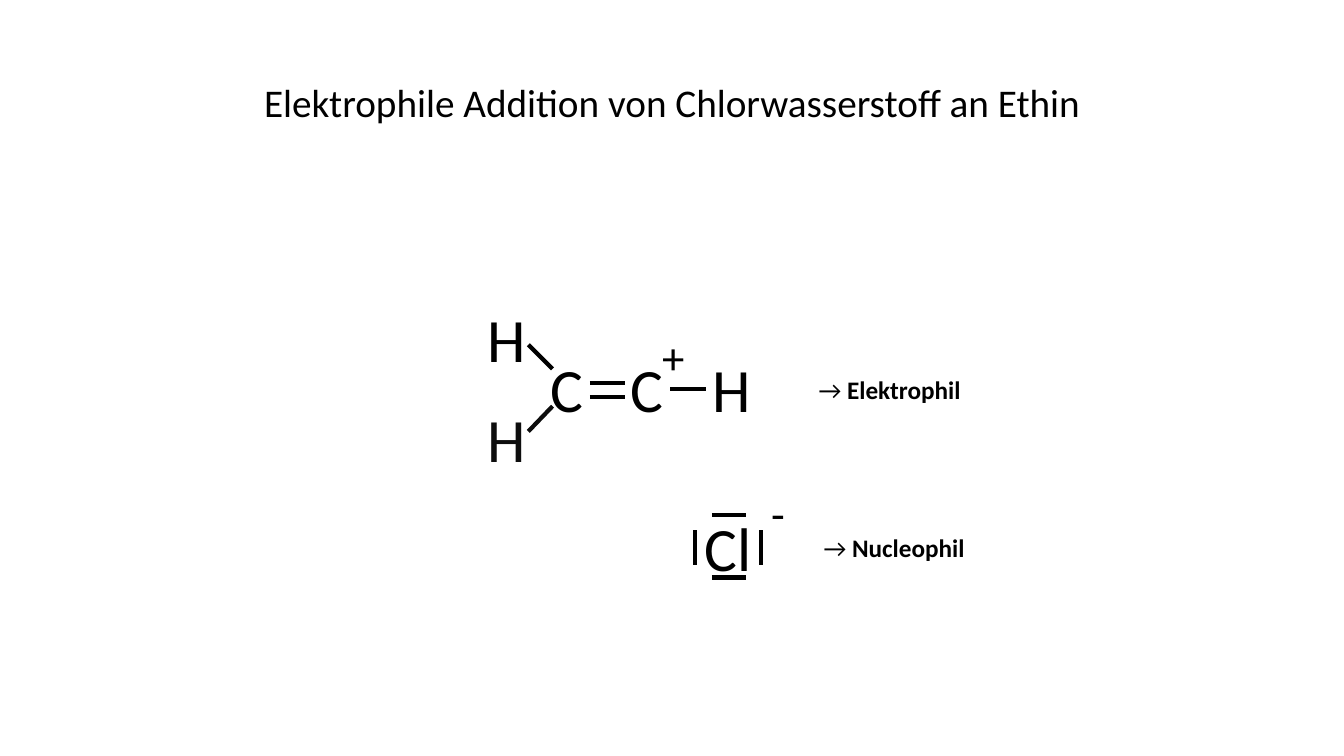
from dataclasses import dataclass

from lxml import etree
from pptx import Presentation
from pptx.dml.color import RGBColor
from pptx.enum.shapes import MSO_CONNECTOR
from pptx.enum.text import MSO_ANCHOR, PP_ALIGN
from pptx.oxml.ns import qn
from pptx.util import Inches, Pt

STRAIGHT = MSO_CONNECTOR.STRAIGHT
TOP = MSO_ANCHOR.TOP
LEFT, CENTER = PP_ALIGN.LEFT, PP_ALIGN.CENTER
TITLE_ONLY_LAYOUT = 5


@dataclass(frozen=True)
class Theme:
    font: str = "Calibri"
    black: RGBColor = RGBColor(0x00, 0x00, 0x00)
    soft_black: RGBColor = RGBColor(0x0D, 0x0D, 0x0D)
    title_size: int = 28
    atom_size: int = 44
    charge_size: int = 32
    label_size: int = 18
    bond_width: int = 3


THEME = Theme()


def write_text(shape, *runs, size, color=THEME.black, align=LEFT):
    """Fill a shape with one paragraph of (text, bold) runs."""
    frame = shape.text_frame
    frame.word_wrap = True
    frame.vertical_anchor = TOP
    paragraph = frame.paragraphs[0]
    paragraph.alignment = align
    for text, bold in runs:
        run = paragraph.add_run()
        run.text = text
        run.font.name = THEME.font
        run.font.size = Pt(size)
        run.font.bold = bold
        run.font.color.rgb = color


def add_box(slide, left, top, width, height):
    return slide.shapes.add_textbox(
        Inches(left), Inches(top), Inches(width), Inches(height))


def add_title(slide, text):
    title = slide.shapes.title
    title.left, title.top = Inches(2.16), Inches(0.73)
    title.width, title.height = Inches(9.01), Inches(0.57)
    write_text(title, (text, False), size=THEME.title_size, align=CENTER)


def add_atom(slide, symbol, left, top, width=0.58, color=THEME.black):
    box = add_box(slide, left, top, width, 0.84)
    write_text(box, (symbol, False), size=THEME.atom_size, color=color)


def add_charge(slide, sign, left, top):
    box = add_box(slide, left, top, 0.94, 0.64)
    write_text(box, (sign, False), size=THEME.charge_size)


def add_label(slide, text, left, top):
    box = add_box(slide, left, top, 4.08, 0.4)
    write_text(box, ("→ ", False), (text, True), size=THEME.label_size)


def add_bond(slide, start_x, start_y, end_x, end_y, color=THEME.black):
    bond = slide.shapes.add_connector(
        STRAIGHT, Inches(start_x), Inches(start_y), Inches(end_x), Inches(end_y))
    bond.line.color.rgb = color
    bond.line.width = Pt(THEME.bond_width)
    # An empty effect list switches the shadow off
    etree.SubElement(bond.element.spPr, qn("a:effectLst"))


def add_vinyl_cation(slide):
    add_charge(slide, "+", 6.47, 3.22)
    for symbol, left, top in (("C", 5.36, 3.43), ("C", 6.15, 3.43),
                              ("H", 4.74, 2.94), ("H", 6.97, 3.43)):
        add_atom(slide, symbol, left, top)
    add_atom(slide, "H", 4.74, 3.93, color=THEME.soft_black)

    # Bonds to hydrogen
    add_bond(slide, 5.24, 3.42, 5.48, 3.66)
    add_bond(slide, 5.48, 4.03, 5.24, 4.28, color=THEME.soft_black)
    add_bond(slide, 6.65, 3.86, 7, 3.86)

    # Double bond between the carbons
    for y in (3.8, 3.94):
        add_bond(slide, 5.85, y, 6.2, y)


def add_chloride(slide):
    add_atom(slide, "Cl", 6.89, 5.01, width=0.96)
    add_charge(slide, "-", 7.55, 4.77)

    # Four lone pairs around the ion
    for x in (6.89, 7.55):
        add_bond(slide, x, 5.26, x, 5.61)
    for y in (5.11, 5.73):
        add_bond(slide, 7.06, y, 7.4, y)


def main():
    presentation = Presentation()
    presentation.slide_width = Inches(13.33)
    presentation.slide_height = Inches(7.5)
    slide = presentation.slides.add_slide(
        presentation.slide_layouts[TITLE_ONLY_LAYOUT])

    add_title(slide, "Elektrophile Addition von Chlorwasserstoff an Ethin")
    add_vinyl_cation(slide)
    add_label(slide, "Elektrophil", 8.02, 3.66)
    add_chloride(slide)
    add_label(slide, "Nucleophil", 8.07, 5.23)

    presentation.save("out.pptx")


if __name__ == "__main__":
    main()
